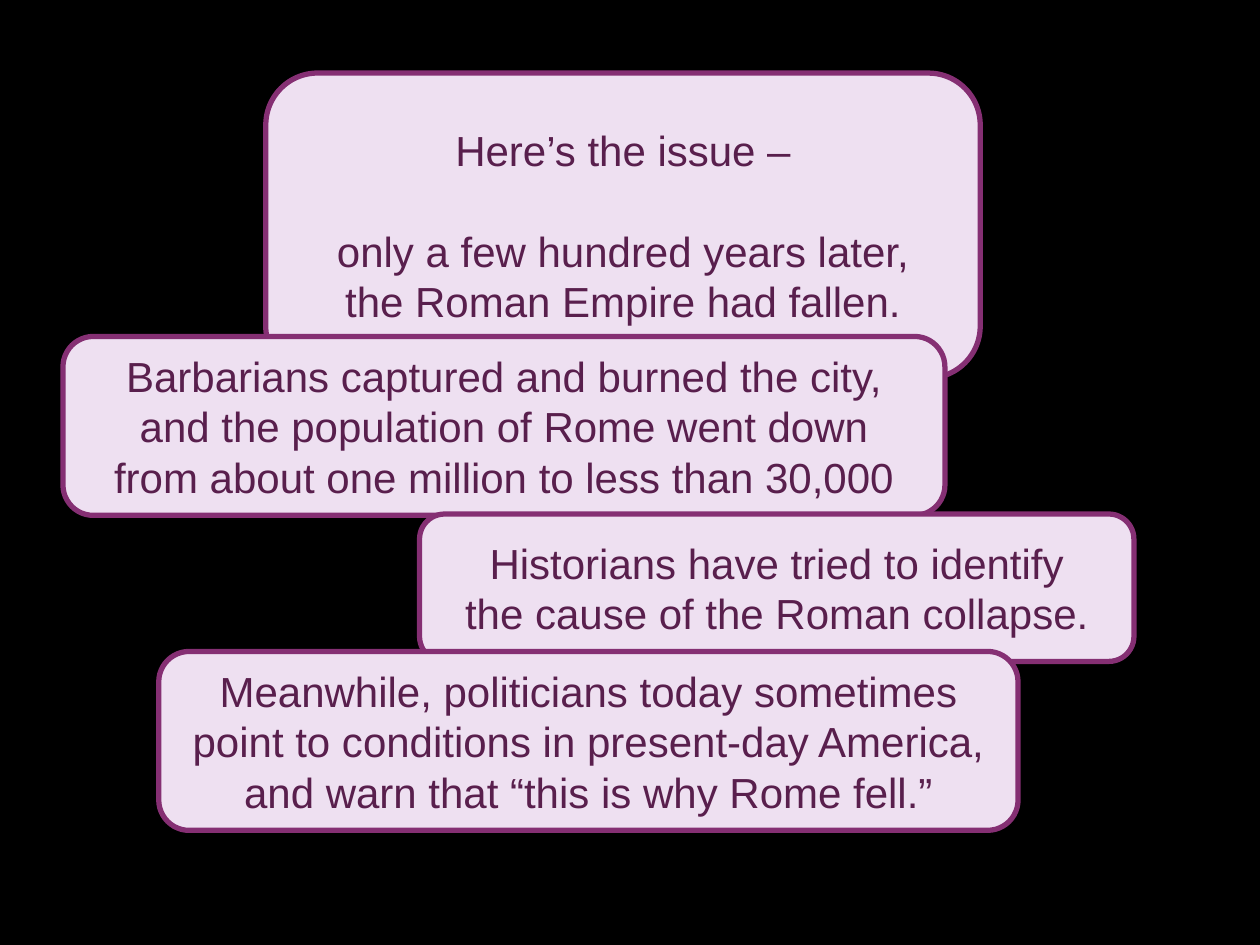
from pptx import Presentation
from pptx.dml.color import RGBColor
from pptx.enum.shapes import MSO_SHAPE
from pptx.enum.text import MSO_ANCHOR, PP_ALIGN
from pptx.util import Inches, Pt

BLACK = RGBColor(0x00, 0x00, 0x00)
LILAC = RGBColor(0xEE, 0xE0, 0xF1)
PURPLE = RGBColor(0x85, 0x2F, 0x73)
PLUM = RGBColor(0x59, 0x1F, 0x4D)

CALLOUTS = [
    ((2.11, 0.58, 5.67, 2.42),
     ["Here’s the issue –",
      "only a few hundred years later,",
      "the Roman Empire had fallen."]),
    ((0.5, 2.67, 7, 1.42),
     ["Barbarians captured and burned the city,",
      "and the population of Rome went down",
      "from about one million to less than 30,000"]),
    ((3.33, 4.08, 5.67, 1.17),
     ["Historians have tried to identify",
      "the cause of the Roman collapse."]),
    ((1.26, 5.17, 6.82, 1.42),
     ["Meanwhile, politicians today sometimes",
      "point to conditions in present-day America,",
      "and warn that “this is why Rome fell.”"]),
]


def add_callout(slide, box, lines):
    """Add a rounded callout whose pointer is tucked into its lower edge."""
    shape = slide.shapes.add_shape(
        MSO_SHAPE.ROUNDED_RECTANGULAR_CALLOUT, *map(Inches, box))
    for index, value in enumerate((-0.21, 0.5, 0.17)):
        shape.adjustments[index] = value
    shape.shadow.inherit = False
    shape.fill.solid()
    shape.fill.fore_color.rgb = LILAC
    shape.line.color.rgb = PURPLE
    shape.line.width = Pt(3)

    text_frame = shape.text_frame
    text_frame.word_wrap = True
    text_frame.vertical_anchor = MSO_ANCHOR.MIDDLE
    text_frame.text = "\n".join(lines)
    for paragraph in text_frame.paragraphs:
        paragraph.alignment = PP_ALIGN.CENTER
        paragraph.line_spacing = Pt(28.8)
        paragraph.font.name = "Arial"
        paragraph.font.size = Pt(24)
        paragraph.font.color.rgb = PLUM
    return shape


def main():
    presentation = Presentation()
    presentation.slide_width = Inches(10)
    presentation.slide_height = Inches(7.5)
    slide = presentation.slides.add_slide(presentation.slide_layouts[6])
    slide.background.fill.solid()
    slide.background.fill.fore_color.rgb = BLACK

    callouts = [add_callout(slide, box, lines) for box, lines in CALLOUTS]
    opening = callouts[0].text_frame.paragraphs
    opening[1].space_before = Pt(28.8)
    opening[-1].space_after = Pt(6)

    presentation.save("out.pptx")


if __name__ == "__main__":
    main()
